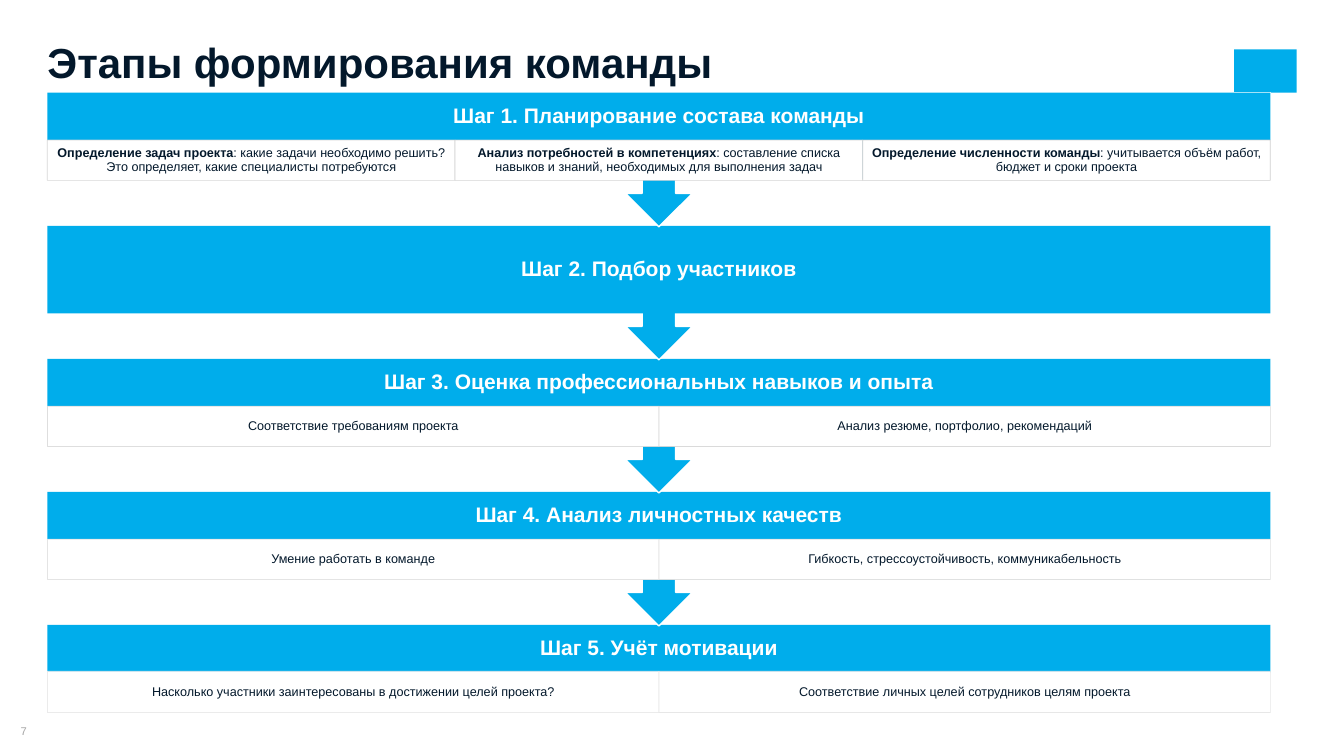
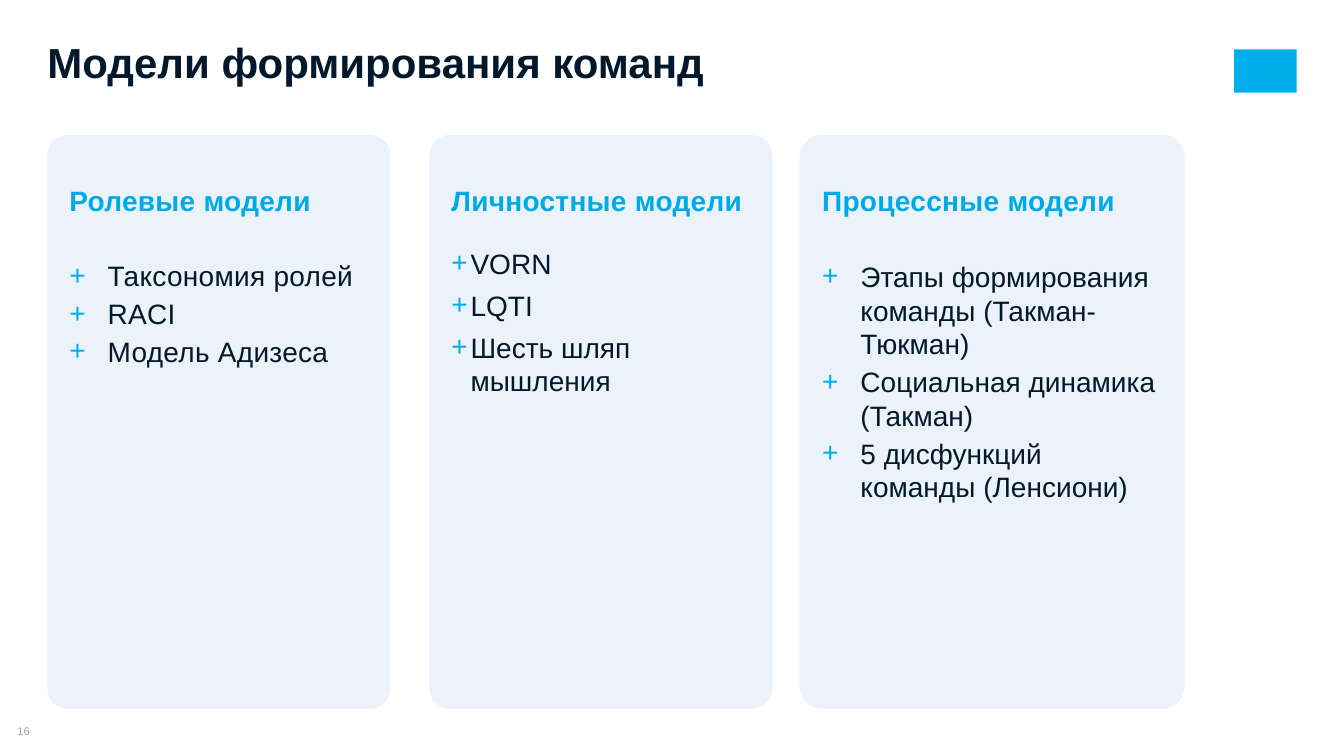
from lxml import etree
from pptx import Presentation
from pptx.dml.color import RGBColor
from pptx.enum import shapes, text
from pptx.oxml.ns import qn
from pptx.util import Inches, Pt

BLUE = RGBColor(0x00, 0xAD, 0xEB)
HEADING_BLUE = RGBColor(0x00, 0xAA, 0xE6)
NAVY = RGBColor(0x03, 0x18, 0x2B)
GREY = RGBColor(0xA6, 0xA6, 0xA6)
PALE = RGBColor(0xEB, 0xF2, 0xFA)
WHITE = RGBColor(0xFF, 0xFF, 0xFF)
FONT = "Arial"
LEFT = 0.47
SHAPE, ALIGN, ANCHOR = shapes.MSO_SHAPE, text.PP_ALIGN, text.MSO_ANCHOR

# Each step: heading, then cells as (bold part, plain part)
STEPS = [
    ("Шаг 1. Планирование состава команды", [
        ("Определение задач проекта",
         ": какие задачи необходимо решить? Это определяет, какие специалисты потребуются"),
        ("Анализ потребностей в компетенциях",
         ": составление списка навыков и знаний, необходимых для выполнения задач"),
        ("Определение численности команды",
         ": учитывается объём работ, бюджет и сроки проекта")]),
    ("Шаг 2. Подбор участников", []),
    ("Шаг 3. Оценка профессиональных навыков и опыта", [
        ("", "Соответствие требованиям проекта"),
        ("", "Анализ резюме, портфолио, рекомендаций")]),
    ("Шаг 4. Анализ личностных качеств", [
        ("", "Умение работать в команде"),
        ("", "Гибкость, стрессоустойчивость, коммуникабельность")]),
    ("Шаг 5. Учёт мотивации", [
        ("", "Насколько участники заинтересованы в достижении целей проекта?"),
        ("", "Соответствие личных целей сотрудников целям проекта")]),
]

# Distances: indent in inches; gap, after and tracking in points
MODELS = [
    dict(heading="Ролевые модели", left=0.47, width=3.4,
         indent=0.38, gap=30, after=3, tracking=0.2,
         items=["Таксономия ролей", "RACI", "Модель Адизеса"]),
    dict(heading="Личностные модели", left=4.26, width=3.4,
         indent=0.19, gap=21, after=6, tracking=0,
         items=["VORN", "LQTI", "Шесть шляп мышления"]),
    dict(heading="Процессные модели", left=7.93, width=3.82,
         indent=0.38, gap=30, after=3, tracking=0,
         items=["Этапы формирования команды (Такман-Тюкман)",
                "Социальная динамика (Такман)",
                "5 дисфункций команды (Ленсиони)"]),
]


def set_frame(tf, anchor, insets):
    """Insets are left, top, right, bottom in inches."""
    tf.word_wrap = True
    tf.vertical_anchor = anchor
    for side, inset in zip(("left", "top", "right", "bottom"), insets):
        setattr(tf, f"margin_{side}", Inches(inset))


def add_run(p, words, size, color, bold=False, tracking=0):
    r = p.add_run()
    r.text = words
    for name, value in dict(name=FONT, size=Pt(size), bold=bold).items():
        setattr(r.font, name, value)
    r.font.color.rgb = color
    if tracking:
        r._r.get_or_add_rPr().set("spc", str(round(tracking * 100)))


def add_box(slide, kind, left, top, width, height, fill, line=None, weight=1):
    sp = slide.shapes.add_shape(kind, *map(Inches, (left, top, width, height)))
    sp.shadow.inherit = False
    sp.fill.solid()
    sp.fill.fore_color.rgb = fill
    if line is None:
        sp.line.fill.background()
    else:
        sp.line.color.rgb = line
        sp.line.width = Pt(weight)
    return sp


def add_slide(prs, title, number):
    slide = prs.slides.add_slide(prs.slide_layouts[5])
    add_box(slide, SHAPE.RECTANGLE, 12.24, 0.49, 0.62, 0.43, BLUE)

    sp = slide.shapes.title
    sp.left, sp.top, sp.width, sp.height = map(Inches, (LEFT, 0.45, 10.51, 0.41))
    set_frame(sp.text_frame, ANCHOR.BOTTOM, (0, 0, 0, 0))
    p = sp.text_frame.paragraphs[0]
    p.alignment, p.line_spacing = ALIGN.LEFT, 0.8
    add_run(p, title, 30, NAVY, bold=True)

    tf = slide.shapes.add_textbox(*map(Inches, (0, 7.19, 0.47, 0.13))).text_frame
    set_frame(tf, ANCHOR.MIDDLE, (0, 0, 0, 0))
    tf.paragraphs[0].alignment = ALIGN.CENTER
    add_run(tf.paragraphs[0], number, 8, GREY)
    return slide


def centred_paragraph(sp, insets):
    set_frame(sp.text_frame, ANCHOR.MIDDLE, insets)
    p = sp.text_frame.paragraphs[0]
    p.alignment, p.line_spacing = ALIGN.CENTER, 0.9
    return p


def add_step(slide, index, heading, cells):
    width, body, band, pitch = 12.13, 0.87, 0.47, 1.32
    top = 0.92 + index * pitch
    is_last = index == len(STEPS) - 1
    if is_last:
        add_box(slide, SHAPE.RECTANGLE, LEFT, top, width, body, BLUE, WHITE)
    else:
        sp = add_box(slide, SHAPE.UP_ARROW_CALLOUT, LEFT, top, width, 1.33, BLUE, WHITE)
        sp.rotation = 180

    sp = add_box(slide, SHAPE.RECTANGLE, LEFT, top, width, band if cells else body, BLUE)
    add_run(centred_paragraph(sp, [0.12] * 4), heading, 15, WHITE, bold=True)

    earlier = sum(len(step_cells) for _, step_cells in STEPS[:index])
    for col, (bold, plain) in enumerate(cells):
        # Outlines fade from step to step, and from right to left within one
        shade = round(204 + 3.63 * (earlier + len(cells) - 1 - col))
        cell_width = width / len(cells)
        sp = add_box(slide, SHAPE.RECTANGLE, LEFT + col * cell_width,
                     top + (0.46 if is_last else band), cell_width,
                     0.41 if is_last else 0.4, WHITE,
                     RGBColor(shade, shade, shade), 0.5)
        color = sp.line._ln.find(".//" + qn("a:srgbClr"))
        etree.SubElement(color, qn("a:alpha"), val="90000")
        p = centred_paragraph(sp, (0.07, 0.01, 0.07, 0.01))
        if bold:
            add_run(p, bold, 9, NAVY, bold=True)
        add_run(p, plain, 9, NAVY)


def add_plus_bullet(p, indent):
    pPr = p._p.get_or_add_pPr()
    pPr.set("marL", str(Inches(indent)))
    pPr.set("indent", str(-Inches(indent)))
    color = etree.SubElement(pPr, qn("a:buClr"))
    etree.SubElement(color, qn("a:srgbClr"), val=str(BLUE))
    etree.SubElement(pPr, qn("a:buFont"), typeface=FONT)
    etree.SubElement(pPr, qn("a:buChar"), char="+")


def add_model_card(slide, model):
    sp = add_box(slide, SHAPE.ROUNDED_RECTANGLE, model["left"], 1.34,
                 model["width"], 5.69, PALE)
    sp.adjustments[0] = 0.058
    tf = sp.text_frame
    set_frame(tf, ANCHOR.TOP, (0.16, 0.42, 0.16, 0.16))
    for i, words in enumerate([model["heading"], *model["items"]]):
        p = tf.add_paragraph() if i else tf.paragraphs[0]
        p.alignment, p.line_spacing = ALIGN.LEFT, 1.0
        p.space_after = Pt(model["after"] if i else model["gap"])
        if i:
            add_plus_bullet(p, model["indent"])
            add_run(p, words, 20, NAVY, tracking=model["tracking"])
        else:
            add_run(p, words, 20, HEADING_BLUE, bold=True, tracking=0.2)


def main():
    prs = Presentation()
    prs.slide_width, prs.slide_height = Inches(13.33), Inches(7.5)

    slide = add_slide(prs, "Этапы формирования команды", "7")
    # Last step first, so that each arrow tip lies over the next step
    for index, (heading, cells) in reversed(list(enumerate(STEPS))):
        add_step(slide, index, heading, cells)

    slide = add_slide(prs, "Модели формирования команд", "16")
    for model in MODELS:
        add_model_card(slide, model)

    prs.save("out.pptx")


if __name__ == "__main__":
    main()
